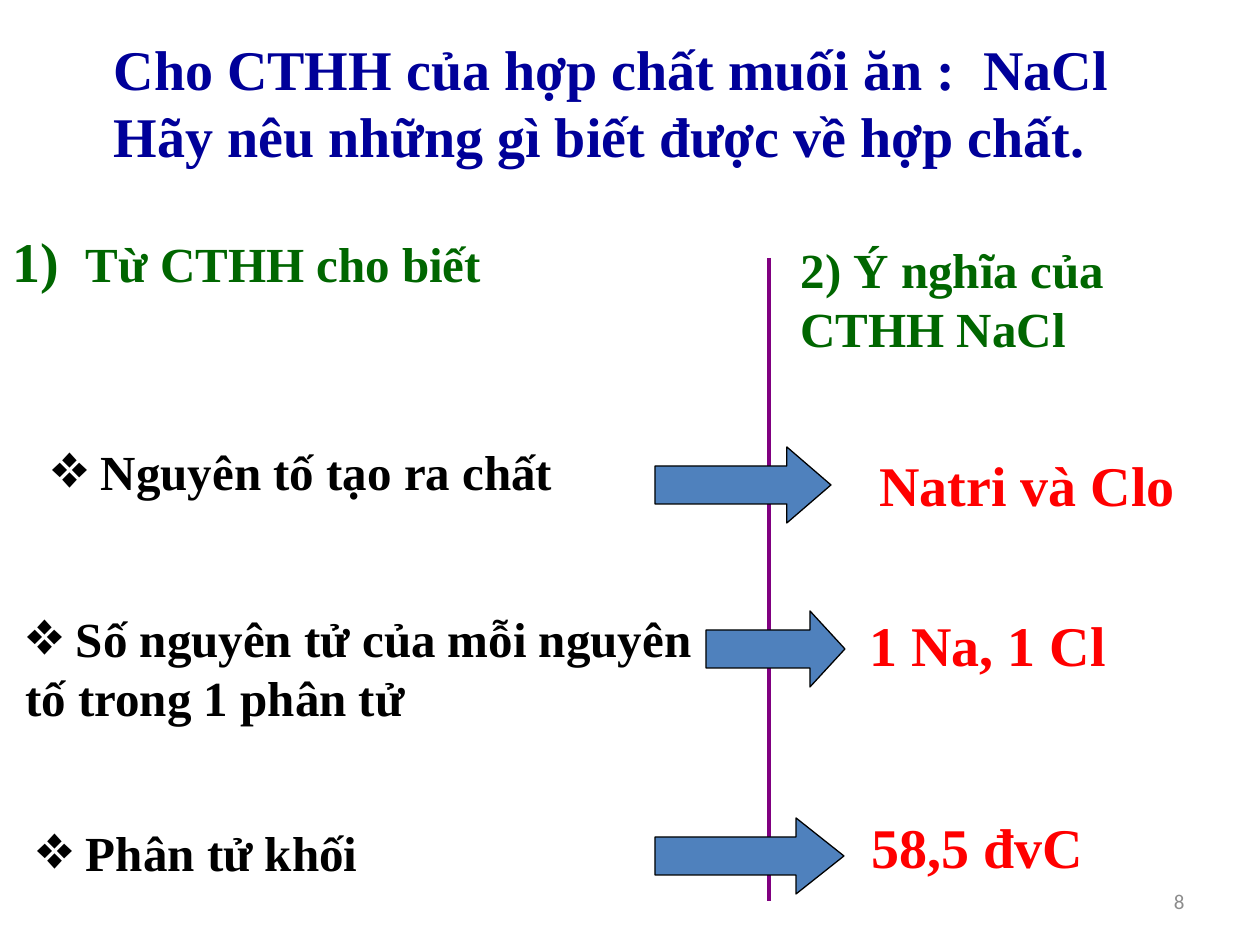
from pptx import Presentation
from pptx.dml.color import RGBColor
from pptx.enum.shapes import MSO_CONNECTOR as Line, MSO_SHAPE as Kind
from pptx.enum.text import MSO_ANCHOR as Anchor, MSO_AUTO_SIZE as Auto, PP_ALIGN as Align
from pptx.util import Pt
from lxml.etree import SubElement
from pptx.oxml.ns import qn

PX = 914400 // 126
HUE = {"title": "000099", "head": "006600", "item": "000000", "value": "FF0000",
       "rule": "800080", "arrow": "4F81BD", "edge": "000000", "num": "8C8C8C"}
SERIF = "Times New Roman"

# Content: text and box (left, top, width, height) in px
TITLE = ("Cho CTHH của hợp chất muối ăn :  NaCl Hãy nêu những gì biết được về hợp chất.",
         (101, 28, 1058, 149))
LEFT = (" Từ CTHH cho biết", (0, 220, 756, 140))
RIGHT = ("2) Ý nghĩa của CTHH NaCl", (788, 233, 420, 131))
ITEMS = [
    (" Nguyên tố tạo ra chất", (38, 435, 580, 72)),
    (" Số nguyên tử của mỗi nguyên tố trong 1 phân tử", (13, 602, 731, 131)),
    (" Phân tử khối", (23, 816, 406, 72)),
]
VALUES = [
    ("Natri và Clo", (867, 444, 324, 81)),
    ("1 Na, 1 Cl", (857, 604, 265, 81)),
    ("58,5 đvC", (859, 806, 239, 81)),
]
# Arrows: box and head length as a share of the height
ARROWS = [
    ((655, 447, 176, 76), 0.58),
    ((706, 611, 139, 76), 0.46),
    ((655, 818, 189, 76), 0.63),
]
RULE = (769, 258, 769, 901)
NUM = ("8", (903, 876, 294, 50))


def emu(box):
    return [n * PX for n in box]


def style(run, size, hue, font=SERIF, bold=True):
    run.font.name, run.font.size, run.font.bold = font, Pt(size), bold
    run.font.color.rgb = RGBColor.from_string(HUE[hue])


def write(shape, text, box, size, hue, wrap=True):
    shape.left, shape.top, shape.width, shape.height = emu(box)
    frame = shape.text_frame
    frame.text = text
    frame.word_wrap, frame.auto_size = wrap, Auto.NONE
    frame.vertical_anchor = Anchor.TOP
    para = frame.paragraphs[0]
    para.alignment, para.space_before = Align.LEFT, Pt(0)
    style(para.runs[0], size, hue)
    return para


def add_text(*args, **opts):
    return write(slide.shapes.add_textbox(0, 0, 0, 0), *args, **opts)


def bullet(para, tag, indent=0, **attrs):
    props = para._p.get_or_add_pPr()
    props.set("marL", str(indent))
    props.set("indent", str(-indent))
    SubElement(props, qn("a:buFont"), typeface=SERIF)
    SubElement(props, qn(tag), **attrs)


deck = Presentation()
deck.slide_width, deck.slide_height = emu((1260, 945))
slide = deck.slides.add_slide(deck.slide_layouts[4])
slots = {s.placeholder_format.idx: s for s in slide.placeholders}

# Title and column headings
write(slots[0], *TITLE, 32, "title")
head = write(slots[1], " ", LEFT[1], 32, "head")
rest = head.add_run()
rest.text = LEFT[0]
style(rest, 28, "head")
bullet(head, "a:buAutoNum", 48 * PX, type="arabicParenR")
write(slots[3], *RIGHT, 28, "head")
for idx, slot in slots.items():
    if idx not in (0, 1, 3):
        slot.element.getparent().remove(slot.element)

# Items and their values
for text, box in ITEMS:
    bullet(add_text(text, box, 28, "item"), "a:buChar", char="❖")
for text, box in VALUES:
    add_text(text, box, 32, "value", wrap=False)

# Dividing rule
rule = slide.shapes.add_connector(Line.STRAIGHT, *emu(RULE))
rule.line.color.rgb = RGBColor.from_string(HUE["rule"])
rule.line.width = Pt(2.25)
SubElement(rule.element.spPr, qn("a:effectLst"))

# Arrows
for box, tip in ARROWS:
    arrow = slide.shapes.add_shape(Kind.RIGHT_ARROW, *emu(box))
    arrow.adjustments[0], arrow.adjustments[1] = 0.5, tip
    arrow.shadow.inherit = False
    arrow.fill.solid()
    arrow.fill.fore_color.rgb = RGBColor.from_string(HUE["arrow"])
    arrow.line.color.rgb = RGBColor.from_string(HUE["edge"])
    arrow.line.width = Pt(0.75)

# Slide number
box = slide.shapes.add_textbox(0, 0, 0, 0)
num = write(box, *NUM, 12, "num")
num.alignment = Align.RIGHT
style(num.runs[0], 12, "num", "Calibri", False)
box.text_frame.vertical_anchor = Anchor.MIDDLE

deck.save("out.pptx")
